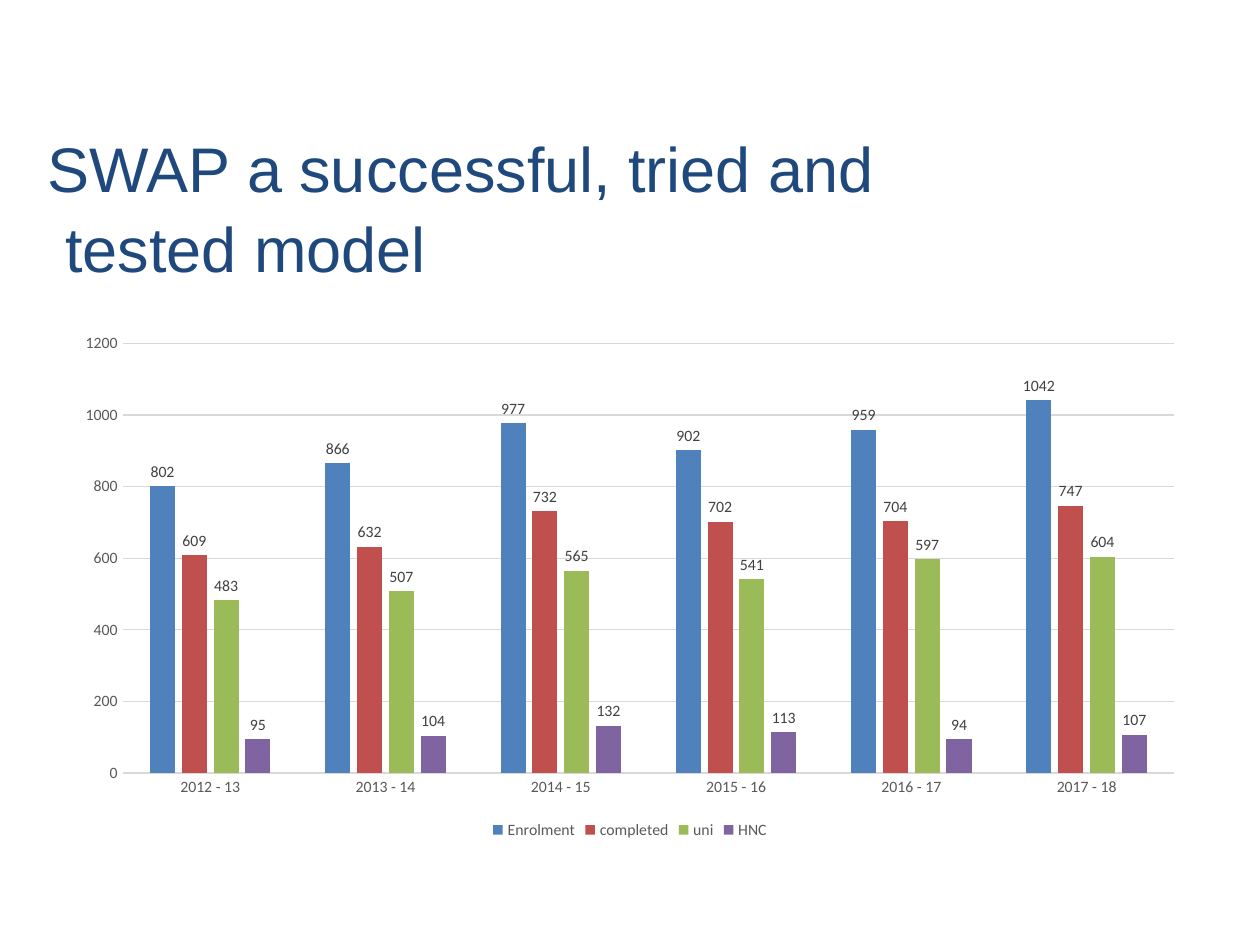
from dataclasses import dataclass

from pptx import Presentation
from pptx.chart.data import CategoryChartData
from pptx.dml.color import RGBColor
from pptx.enum.chart import XL_CHART_TYPE, XL_LABEL_POSITION, XL_LEGEND_POSITION, XL_TICK_MARK
from pptx.enum.text import MSO_ANCHOR
from pptx.util import Inches, Pt


@dataclass(frozen=True)
class Theme:
    """Colours, fonts and type sizes of the slide."""
    title_font: str = "Arial"
    chart_font: str = "Calibri"
    title_size: float = 36
    chart_size: float = 10
    label_size: float = 9
    title: str = "1F497D"
    chart_text: str = "000000"
    axis_text: str = "595959"
    value_text: str = "404040"
    rule: str = "D9D9D9"
    bars: tuple = ("4F81BD", "C0504D", "9BBB59", "8064A2")


THEME = Theme()
YEARS = [f"{year} - {year - 1999}" for year in range(2012, 2018)]
STUDENTS = {
    "Enrolment": (802, 866, 977, 902, 959, 1042),
    "completed": (609, 632, 732, 702, 704, 747),
    "uni": (483, 507, 565, 541, 597, 604),
    "HNC": (95, 104, 132, 113, 94, 107),
}


def apply(target, values):
    """Set each attribute in values on target."""
    for name, value in values.items():
        setattr(target, name, value)


def style_font(font, name, size, color):
    """Give a font its face, size and colour."""
    apply(font, {"name": name, "size": Pt(size), "bold": False})
    font.color.rgb = RGBColor.from_string(color)


def style_rule(line):
    """Draw a thin grey chart rule."""
    line.color.rgb = RGBColor.from_string(THEME.rule)
    line.width = Pt(0.75)


def add_heading(slide, left, top, width, height):
    """Place the two-line heading in the given box."""
    frame = slide.shapes.add_textbox(left, top, width, height).text_frame
    apply(frame, {"word_wrap": True, "vertical_anchor": MSO_ANCHOR.MIDDLE})
    heading = frame.paragraphs[0]
    heading.text = "SWAP a successful, tried and\v tested model"
    heading.line_spacing = 1.05
    for run in heading.runs:
        style_font(run.font, THEME.title_font, THEME.title_size, THEME.title)


def add_student_chart(slide, left, top, width, height):
    """Place the clustered columns of student numbers in the given box."""
    data = CategoryChartData()
    data.categories = YEARS
    for name, values in STUDENTS.items():
        data.add_series(name, values)
    chart = slide.shapes.add_chart(
        XL_CHART_TYPE.COLUMN_CLUSTERED, left, top, width, height, data).chart
    apply(chart, {"has_title": False, "has_legend": True})
    style_font(chart.font, THEME.chart_font, THEME.chart_size, THEME.chart_text)

    legend = chart.legend
    apply(legend, {"position": XL_LEGEND_POSITION.BOTTOM, "include_in_layout": False})
    style_font(legend.font, THEME.chart_font, THEME.label_size, THEME.axis_text)

    years, counts = chart.category_axis, chart.value_axis
    for axis in (years, counts):
        apply(axis, {"major_tick_mark": XL_TICK_MARK.NONE,
                     "minor_tick_mark": XL_TICK_MARK.NONE})
        style_font(axis.tick_labels.font, THEME.chart_font,
                   THEME.label_size, THEME.axis_text)
    style_rule(years.format.line)
    counts.format.line.fill.background()
    apply(counts, {"has_major_gridlines": True, "minimum_scale": 0,
                   "maximum_scale": 1200, "major_unit": 200})
    style_rule(counts.major_gridlines.format.line)

    columns = chart.plots[0]
    apply(columns, {"gap_width": 219, "overlap": -27, "vary_by_categories": False})
    for series, color in zip(columns.series, THEME.bars):
        series.format.fill.solid()
        series.format.fill.fore_color.rgb = RGBColor.from_string(color)
        series.invert_if_negative = False
        labels = series.data_labels
        apply(labels, {"show_value": True, "position": XL_LABEL_POSITION.OUTSIDE_END})
        style_font(labels.font, THEME.chart_font, THEME.label_size, THEME.value_text)


def main():
    """Build and save the slide."""
    deck = Presentation()
    apply(deck, {"slide_width": Inches(10), "slide_height": Inches(7.5)})
    slide = deck.slides.add_slide(deck.slide_layouts[6])
    add_heading(slide, Inches(0.28), Inches(0.92), Inches(8.98), Inches(1.42))
    add_student_chart(slide, Inches(0.5), Inches(2.57), Inches(9), Inches(4.13))
    deck.save("out.pptx")


if __name__ == "__main__":
    main()
